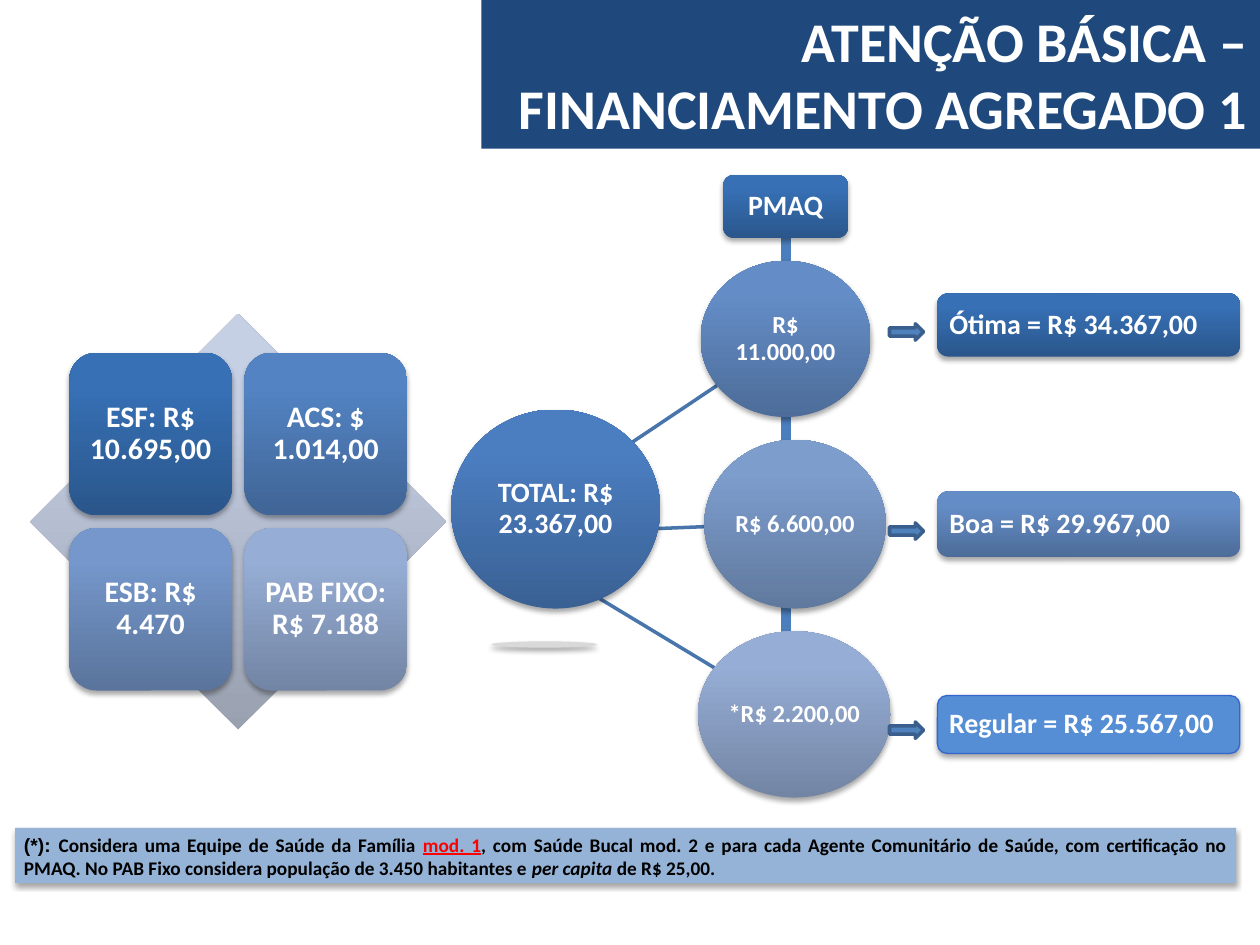
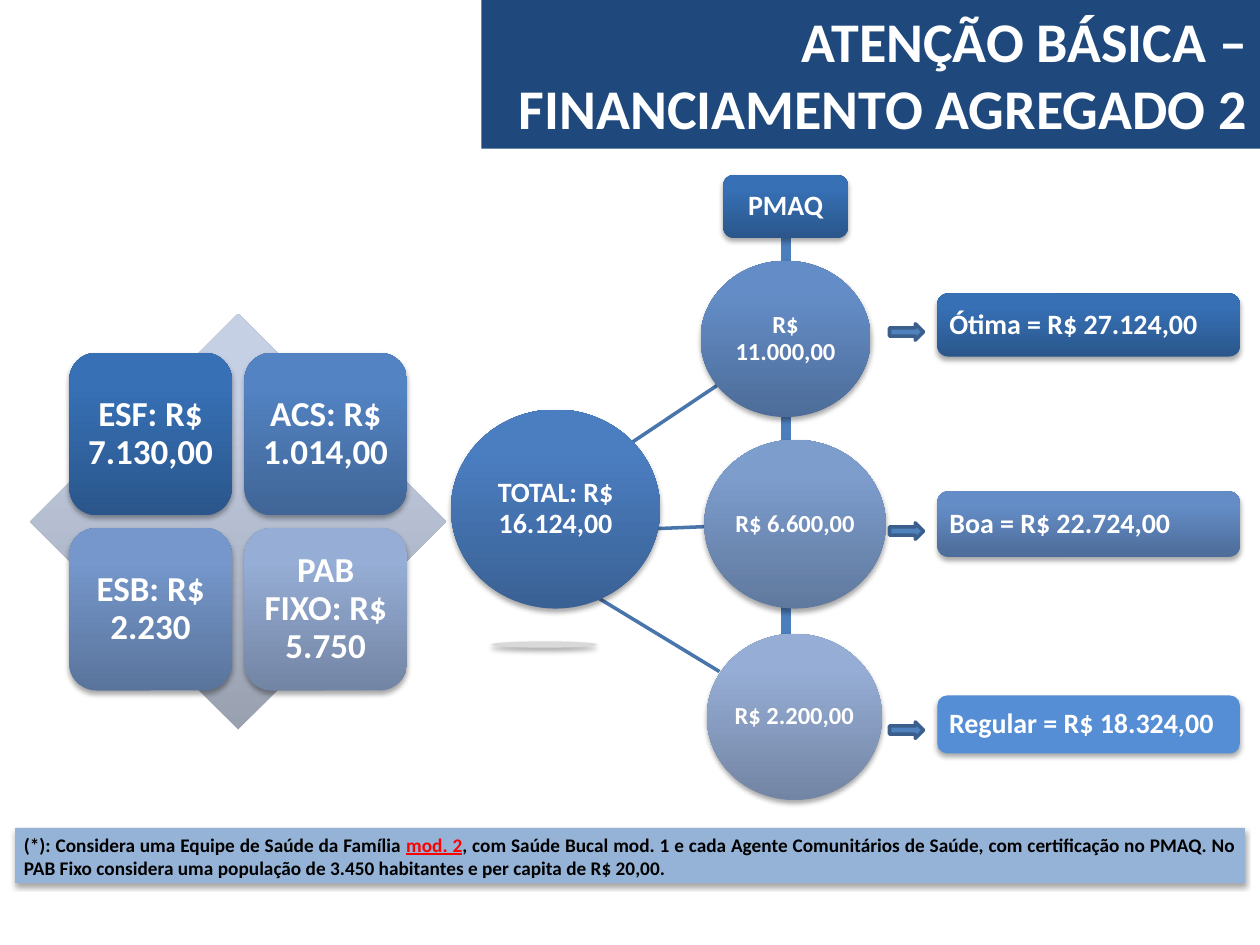
from lxml import etree
from pptx import Presentation
from pptx.dml.color import RGBColor
from pptx.enum import shapes, text
from pptx.oxml.ns import qn
from pptx.util import Inches, Pt

FONT = "Calibri"
WHITE, BLACK, RED = "FFFFFF", "000000", "FF0000"
NAVY, PALE, SKY = "1F497D", "95B3D7", "558ED5"
TRUNK, SPOKE = "4B7EBC", "4875AC"
# Gradients: bottom colour, top colour
DEEP = ("2A568B", "3770B5")
ROYAL = ("406596", "5383C3")
MID = ("5A749C", "7597CB")
MIST = ("7385A4", "96ADD5")
HUB = ("3A6194", "4B7EC1")
STEEL = ("4D6C99", "648DC7")
HAZE = ("60799E", "7D9DCD")
FOG = ("99A0AF", "C6D0E4")

KIND = shapes.MSO_SHAPE
LEFT, MIDDLE, RIGHT, JUSTIFY = (
    text.PP_ALIGN.LEFT, text.PP_ALIGN.CENTER,
    text.PP_ALIGN.RIGHT, text.PP_ALIGN.JUSTIFY)

PLANS = [
    dict(
        title="ATENÇÃO BÁSICA – FINANCIAMENTO AGREGADO 1",
        tiles=["ESF: R$ 10.695,00", "ACS: $ 1.014,00",
               "ESB: R$ 4.470", "PAB FIXO: R$ 7.188"],
        tile_size=17,
        total="TOTAL: R$ 23.367,00",
        low="*R$ 2.200,00", low_box=(5.54, 5.01, 1.53, 1.32),
        low_end=(5.67, 5.3),
        grades=["Ótima = R$ 34.367,00", "Boa = R$ 29.967,00",
                "Regular = R$ 25.567,00"],
        edge="3366CC",
        note_width=9.69,
        note=[("(*): ", dict(font="Arial")),
              ("Considera uma Equipe de Saúde da Família ", {}),
              ("mod. 1", dict(color=RED, under=True)),
              (", com Saúde Bucal mod. 2 e para cada Agente Comunitário de "
               "Saúde, com certificação no PMAQ. No PAB Fixo considera "
               "população de 3.450 habitantes e ", {}),
              ("per capita ", dict(italic=True)),
              ("de R$ 25,00.", {})],
    ),
    dict(
        title="ATENÇÃO BÁSICA – FINANCIAMENTO AGREGADO 2",
        tiles=["ESF: R$ 7.130,00", "ACS: R$ 1.014,00",
               "ESB: R$ 2.230", "PAB FIXO: R$ 5.750"],
        tile_size=20,
        total="TOTAL: R$ 16.124,00",
        low="R$ 2.200,00", low_box=(5.61, 5.03, 1.39, 1.32),
        low_end=(5.71, 5.33),
        grades=["Ótima = R$ 27.124,00", "Boa = R$ 22.724,00",
                "Regular = R$ 18.324,00"],
        edge=None,
        note_width=9.76,
        note=[("(*): Considera uma Equipe de Saúde da Família ", {}),
              ("mod. 2", dict(color=RED, under=True)),
              (", com Saúde Bucal mod. 1 e cada Agente Comunitários de Saúde, "
               "com certificação no PMAQ. No PAB Fixo considera uma população "
               "de 3.450 habitantes e per capita de R$ 20,00.", {})],
    ),
]


def rgb(code):
    return RGBColor.from_string(code)


def write(shape, words, size=16, color=WHITE, align=MIDDLE, inset=(0.07, 0.07),
          anchor=text.MSO_ANCHOR.MIDDLE, spacing=0.9):
    """Fill a shape with one bold paragraph: a string or (text, format) runs."""
    frame = shape.text_frame
    frame.word_wrap = True
    frame.auto_size = text.MSO_AUTO_SIZE.NONE
    frame.vertical_anchor = anchor
    frame.margin_left = frame.margin_right = Inches(inset[0])
    frame.margin_top = frame.margin_bottom = Inches(inset[1])
    para = frame.paragraphs[0]
    para.alignment, para.line_spacing = align, spacing
    for part, form in [(words, {})] if isinstance(words, str) else words:
        run = para.add_run()
        run.text = part
        font = run.font
        font.name, font.size, font.bold = form.get("font", FONT), Pt(size), True
        font.color.rgb = rgb(form.get("color", color))
        font.italic = form.get("italic", False)
        font.underline = form.get("under", False)


def paint(shape, fill):
    """Fill with one colour, or with a (bottom, top) gradient."""
    if isinstance(fill, str):
        shape.fill.solid()
        shape.fill.fore_color.rgb = rgb(fill)
        return
    shape.fill.gradient()
    shape.fill.gradient_angle = 90
    for stop, code, place in zip(shape.fill.gradient_stops, fill, (0, 0.8)):
        stop.color.rgb = rgb(code)
        stop.position = place


def shade(shape):
    """Add a soft shadow below the shape."""
    effects = shape._element.spPr.find(qn("a:effectLst"))
    outer = etree.SubElement(
        effects, qn("a:outerShdw"), blurRad=str(Pt(3.1)), dist=str(Pt(1.8)),
        dir="5400000", rotWithShape="0")
    color = etree.SubElement(outer, qn("a:srgbClr"), val=BLACK)
    etree.SubElement(color, qn("a:alpha"), val="35000")


def draw(slide, kind, box, fill, edge=None, weight=0.75, shadow=True):
    shape = slide.shapes.add_shape(kind, *map(Inches, box))
    paint(shape, fill)
    if edge:
        shape.line.color.rgb = rgb(edge)
        shape.line.width = Pt(weight)
    else:
        shape.line.fill.background()
    shape.shadow.inherit = False
    if shadow:
        shade(shape)
    return shape


def link(slide, start, end, color, weight):
    line = slide.shapes.add_connector(
        shapes.MSO_CONNECTOR.STRAIGHT, *map(Inches, (*start, *end)))
    line.line.color.rgb = rgb(color)
    line.line.width = Pt(weight)
    etree.SubElement(line._element.spPr, qn("a:effectLst"))


def head(slide, words):
    title = slide.shapes.title
    title.left, title.top, title.width, title.height = map(
        Inches, (3.82, 0, 6.18, 1.18))
    paint(title, NAVY)
    write(title, words, size=32, align=RIGHT, inset=(0.1, 0.05),
          anchor=text.MSO_ANCHOR.TOP, spacing=1)


def matrix(slide, tiles, size):
    """Four tiles on a diamond."""
    draw(slide, KIND.DIAMOND, (0.24, 2.49, 3.3, 3.3), FOG, shadow=False)
    for i, (words, fill) in enumerate(zip(tiles, (DEEP, ROYAL, MID, MIST))):
        row, col = divmod(i, 2)
        box = (0.55 + 1.39 * col, 2.8 + 1.39 * row, 1.29, 1.29)
        write(draw(slide, KIND.ROUNDED_RECTANGLE, box, fill), words, size=size)


def wheel(slide, plan):
    """The total, its spokes and the three circles."""
    for start, end in [((4.36, 4.51), plan["low_end"]),
                       ((4.36, 4.23), (5.59, 4.18)),
                       ((4.36, 3.95), (5.69, 3.06))]:
        link(slide, start, end, SPOKE, 2)
    draw(slide, KIND.OVAL, (3.9, 5.09, 0.84, 0.05), "D9D9D9")
    for words, box, fill, size in [
            (plan["total"], (3.58, 3.25, 1.66, 1.58), HUB, 16),
            ("R$ 11.000,00", (5.56, 2.07, 1.35, 1.24), STEEL, 14),
            ("R$ 6.600,00", (5.59, 3.49, 1.44, 1.34), HAZE, 14),
            (plan["low"], plan["low_box"], MIST, 14)]:
        disc = draw(slide, KIND.OVAL, box, fill)
        write(disc, words, size=size, inset=(0.01, 0.01))


def grades(slide, labels, edge):
    rows = [(2.33, 0.5, DEEP, None), (3.9, 0.52, STEEL, None),
            (5.52, 0.46, SKY, edge)]
    for i, (words, (top, high, fill, rim)) in enumerate(zip(labels, rows)):
        bar = draw(slide, KIND.ROUNDED_RECTANGLE, (7.44, top, 2.4, high),
                   fill, rim)
        write(bar, words, align=LEFT)
        draw(slide, KIND.RIGHT_ARROW, (7.06, 2.57 + 1.58 * i, 0.27, 0.13),
             "4F81BD", "3A5F8C", 2, shadow=False)


def build(deck, plan):
    slide = deck.slides.add_slide(deck.slide_layouts[5])
    head(slide, plan["title"])
    link(slide, (6.24, 1.88), (6.24, 5.05), TRUNK, 6)
    matrix(slide, plan["tiles"], plan["tile_size"])
    wheel(slide, plan)
    grades(slide, plan["grades"], plan["edge"])
    note = draw(slide, KIND.RECTANGLE, (0.12, 6.57, plan["note_width"], 0.44),
                PALE)
    write(note, plan["note"], size=11, color=BLACK, align=JUSTIFY,
          inset=(0.07, 0.04), anchor=text.MSO_ANCHOR.TOP, spacing=1)
    badge = draw(slide, KIND.ROUNDED_RECTANGLE, (5.74, 1.39, 0.99, 0.5), DEEP)
    write(badge, "PMAQ")


def main():
    deck = Presentation()
    deck.slide_width, deck.slide_height = Inches(10), Inches(7.5)
    for plan in PLANS:
        build(deck, plan)
    deck.save("out.pptx")


if __name__ == "__main__":
    main()
